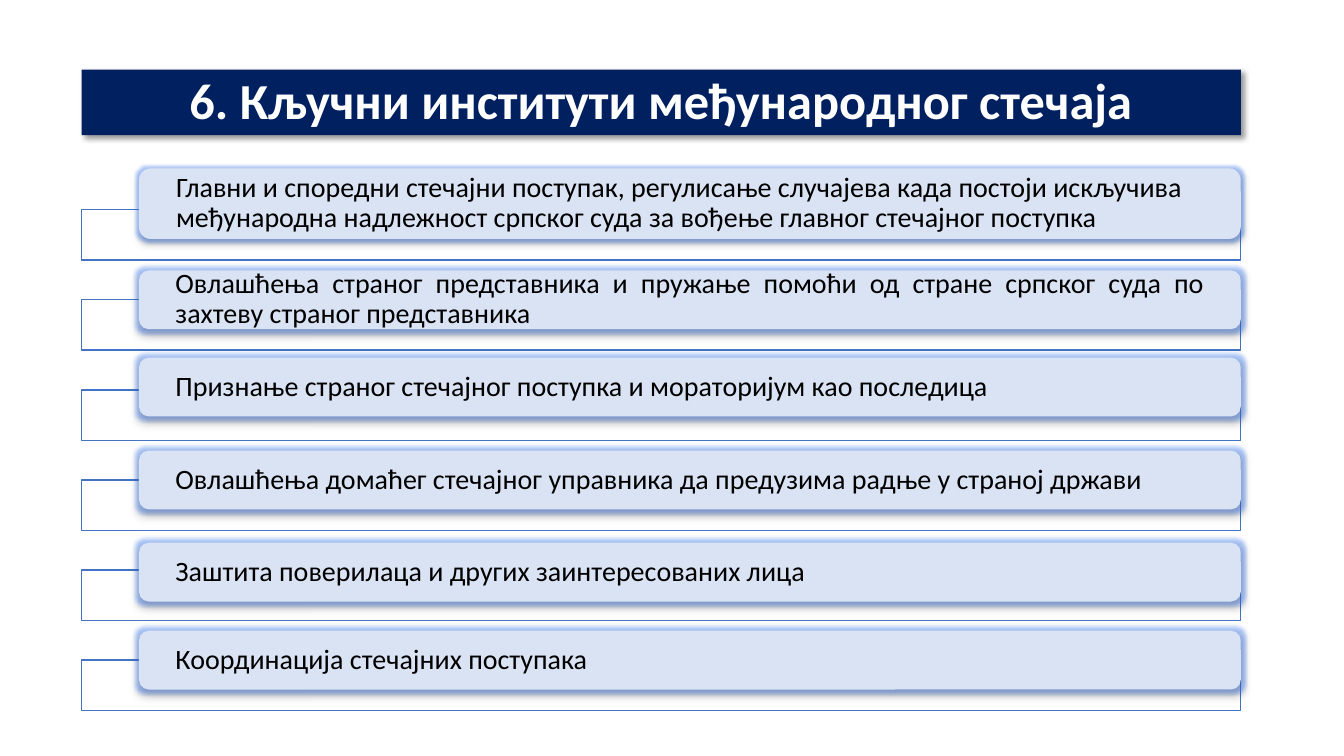
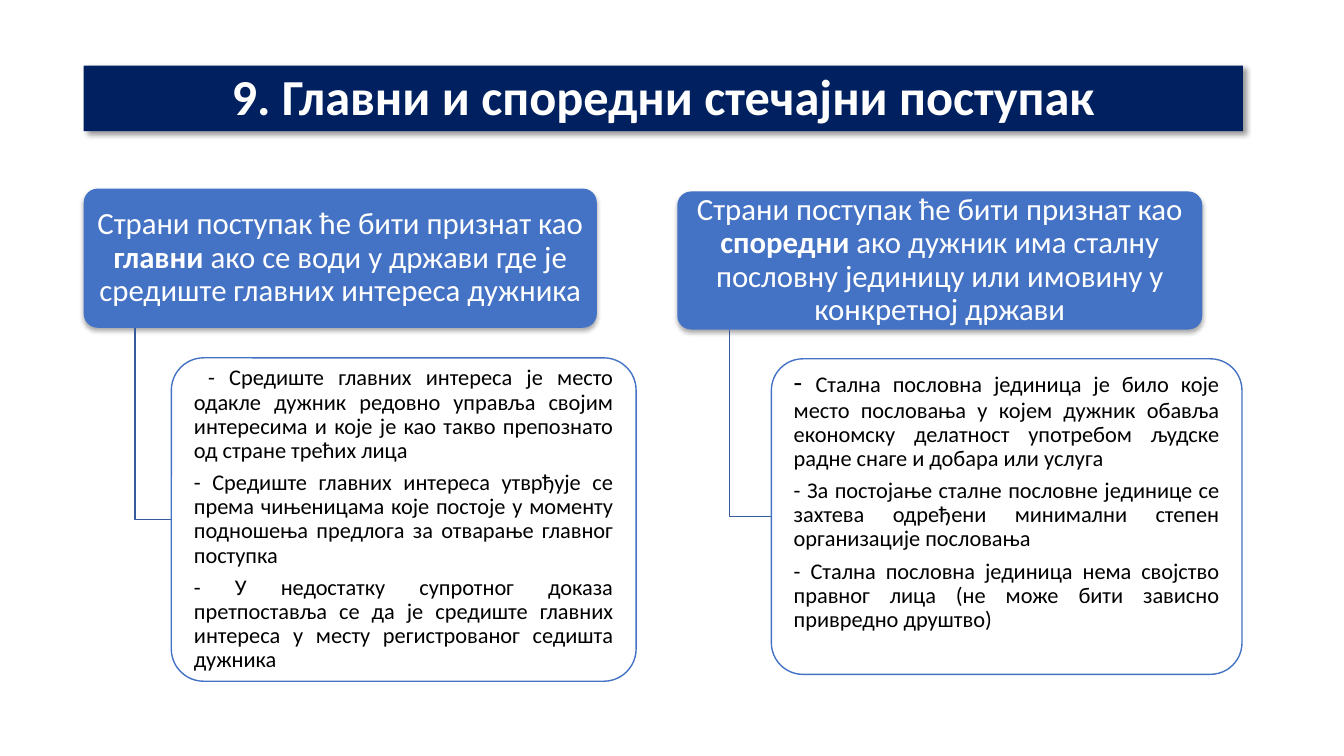
from dataclasses import dataclass

import pptx
import pptx.dml.color
import pptx.enum.shapes
import pptx.enum.text
import pptx.oxml
import pptx.oxml.ns
import pptx.util

Pt = pptx.util.Pt
Align = pptx.enum.text.PP_ALIGN
Anchor = pptx.enum.text.MSO_ANCHOR
Shape = pptx.enum.shapes.MSO_SHAPE


@dataclass(frozen=True)
class Theme:
    font: str = "Calibri"
    navy: str = "002060"
    blue: str = "4472C4"
    elbow: str = "365B9D"
    pale: str = "DAE3F3"
    glow: str = "4080F8"
    white: str = "FFFFFF"
    black: str = "000000"
    title_size: float = 36
    header_size: float = 22
    row_size: float = 20
    detail_size: float = 16
    line_width: float = 1
    line_spacing: float = 0.9
    paragraph_gap: float = 5.6


@dataclass(frozen=True)
class Box:
    left: float
    top: float
    width: float
    height: float

    @property
    def points(self):
        return [Pt(value) for value in (self.left, self.top, self.width, self.height)]


THEME = Theme()
CARD_SHADOW = dict(opacity=32, blur=3.5, distance=2.2, angle=90)
TITLE_SHADOW = dict(opacity=40, blur=4, distance=3, angle=45)


def rgb(color):
    return pptx.dml.color.RGBColor.from_string(color)


def set_effects(shape, shadow, glow=False):
    """Give the shape an outer shadow and, if asked, a soft blue glow."""
    shape.shadow.inherit = False
    effects = shape._element.spPr.find(pptx.oxml.ns.qn("a:effectLst"))
    namespace = pptx.oxml.ns.nsdecls("a")
    if glow:
        effects.append(pptx.oxml.parse_xml(
            f'<a:glow {namespace} rad="{Pt(5)}"><a:srgbClr val="{THEME.glow}">'
            '<a:alpha val="40000"/></a:srgbClr></a:glow>'))
    effects.append(pptx.oxml.parse_xml(
        f'<a:outerShdw {namespace} blurRad="{Pt(shadow["blur"])}" dist="{Pt(shadow["distance"])}" '
        f'dir="{shadow["angle"] * 60000}" rotWithShape="0"><a:srgbClr val="{THEME.black}">'
        f'<a:alpha val="{shadow["opacity"] * 1000}"/></a:srgbClr></a:outerShdw>'))


def write_text(shape, paragraphs, *, size, color, align=Align.LEFT, anchor=Anchor.MIDDLE,
               insets=(7.2, 3.6, 7.2, 3.6), bold=False, gap=0):
    """Fill a shape; a paragraph is a string or a list of (text, run format) pairs."""
    frame = shape.text_frame
    frame.word_wrap = True
    frame.auto_size = pptx.enum.text.MSO_AUTO_SIZE.NONE
    frame.vertical_anchor = anchor
    (frame.margin_left, frame.margin_top,
     frame.margin_right, frame.margin_bottom) = [Pt(inset) for inset in insets]
    for index, content in enumerate(paragraphs):
        paragraph = frame.paragraphs[0] if index == 0 else frame.add_paragraph()
        paragraph.alignment = align
        paragraph.line_spacing = THEME.line_spacing
        paragraph.space_before = Pt(0)
        paragraph.space_after = Pt(gap)
        runs = [(content, {})] if isinstance(content, str) else content
        for text, run_format in runs:
            run = paragraph.add_run()
            run.text = text
            run.font.name = THEME.font
            run.font.size = Pt(run_format.get("size", size))
            run.font.bold = run_format.get("bold", bold)
            run.font.color.rgb = rgb(color)


def add_box(slide, kind, box, *, fill, line=None, corner=None):
    shape = slide.shapes.add_shape(kind, *box.points)
    shape.shadow.inherit = False
    shape.fill.solid()
    shape.fill.fore_color.rgb = rgb(fill)
    if line:
        shape.line.color.rgb = rgb(line)
        shape.line.width = Pt(THEME.line_width)
    else:
        shape.line.fill.background()
    if corner is not None:
        shape.adjustments[0] = corner
    return shape


def add_titled_slide(presentation, title, left, top):
    slide = presentation.slides.add_slide(presentation.slide_layouts.get_by_name("Title Only"))
    bar = slide.shapes.title
    bar.left, bar.top, bar.width, bar.height = Box(left, top, 828, 46.8).points
    bar.fill.solid()
    bar.fill.fore_color.rgb = rgb(THEME.navy)
    set_effects(bar, TITLE_SHADOW)
    write_text(bar, [title], size=THEME.title_size, color=THEME.white, bold=True,
               align=Align.CENTER, anchor=Anchor.BOTTOM)
    return slide


def add_row(slide, frame, text, rise, height, align):
    """Draw an outlined frame and the card that stands `rise` points above its top."""
    indent = 41
    add_box(slide, Shape.RECTANGLE, frame, fill=THEME.white, line=THEME.blue)
    card = add_box(slide, Shape.ROUNDED_RECTANGLE,
                   Box(frame.left + indent, frame.top - rise, frame.width - indent, height),
                   fill=THEME.pale)
    set_effects(card, CARD_SHADOW, glow=True)
    write_text(card, [text], size=THEME.row_size, color=THEME.black, align=align,
               insets=(24, 0, 24, 0))


def add_elbow(slide, left, top, right, bottom):
    builder = slide.shapes.build_freeform(Pt(left), Pt(top))
    builder.add_line_segments([(Pt(left), Pt(bottom)), (Pt(right), Pt(bottom))], close=False)
    elbow = builder.convert_to_shape()
    elbow.shadow.inherit = False
    elbow.fill.background()
    elbow.line.color.rgb = rgb(THEME.elbow)
    elbow.line.width = Pt(THEME.line_width)


def add_branch(slide, header_box, header, detail_box, details, spare=0):
    """Draw a header joined to its details; `spare` is kept free below the text."""
    header_shape = add_box(slide, Shape.ROUNDED_RECTANGLE, header_box, fill=THEME.blue, corner=0.1)
    set_effects(header_shape, CARD_SHADOW)
    write_text(header_shape, [header], size=THEME.header_size, color=THEME.white,
               align=Align.CENTER, insets=(6.5, 5, 6.5, 5))
    add_elbow(slide, header_box.left + header_box.width / 10, header_box.top + header_box.height,
              detail_box.left, detail_box.top + detail_box.height / 2)
    detail_shape = add_box(slide, Shape.ROUNDED_RECTANGLE, detail_box,
                           fill=THEME.white, line=THEME.blue, corner=0.1)
    write_text(detail_shape, details, size=THEME.detail_size, color=THEME.black,
               align=Align.JUSTIFY, insets=(9.4, 8, 9.4, 8 + spare), gap=THEME.paragraph_gap)


def build_institutes(presentation):
    slide = add_titled_slide(presentation, "6. Кључни институти међународног стечаја", 58.3, 49.7)
    rows = [
        ("Главни и споредни стечајни поступак, регулисање случајева када постоји искључива "
         "међународна надлежност српског суда за вођење главног стечајног поступка",
         29.5, 50.4, Align.LEFT),
        ("Овлашћења страног представника и пружање помоћи од стране српског суда по захтеву "
         "страног представника", 21, 42, Align.JUSTIFY),
        ("Признање страног стечајног поступка и мораторијум као последица", 23, 42, Align.LEFT),
        ("Овлашћења домаћег стечајног управника да предузима радње у страној држави",
         21, 42, Align.LEFT),
        ("Заштита поверилаца и других заинтересованих лица", 19.5, 42, Align.LEFT),
        ("Координација стечајних поступака", 21, 42, Align.LEFT),
    ]
    first_top, pitch = 149.8, 64.35
    for index, row in enumerate(rows):
        add_row(slide, Box(58.3, first_top + index * pitch, 828, 36), *row)


def build_proceedings(presentation):
    slide = add_titled_slide(presentation, "9. Главни и споредни стечајни поступак", 59.8, 46.8)
    opening = "Страни поступак ће бити признат као "
    add_branch(
        slide,
        Box(59.8, 134.7, 366.5, 99.4),
        [(opening, {}), ("главни", {"bold": True}),
         (" ако се води у држави где је средиште главних интереса дужника", {})],
        Box(122.4, 255.6, 332, 231),
        [" - Средиште главних интереса је место одакле дужник редовно управља својим "
         "интересима и које је као такво препознато од стране трећих лица",
         "- Средиште главних интереса утврђује се према чињеницама које постоје у моменту "
         "подношења предлога за отварање главног поступка",
         "- У недостатку супротног доказа претпоставља се да је средиште главних интереса "
         "у месту регистрованог седишта дужника"])
    add_branch(
        slide,
        Box(483.8, 136.8, 375, 98.6),
        [(opening, {}), ("споредни", {"bold": True}),
         (" ако дужник има сталну пословну јединицу или имовину у конкретној држави", {})],
        Box(551, 256.3, 336.2, 225.4),
        [[("- ", {"size": THEME.row_size}),
          ("Стална пословна јединица је било које место пословања у којем дужник обавља "
           "економску делатност употребом људске радне снаге и добара или услуга", {})],
         "- За постојање сталне пословне јединице се захтева одређени минимални степен "
         "организације пословања",
         "- Стална пословна јединица нема својство правног лица (не може бити зависно "
         "привредно друштво)"],
        spare=23)


def main():
    presentation = pptx.Presentation()
    presentation.slide_width, presentation.slide_height = Pt(960), Pt(540)
    build_institutes(presentation)
    build_proceedings(presentation)
    presentation.save("out.pptx")


if __name__ == "__main__":
    main()
